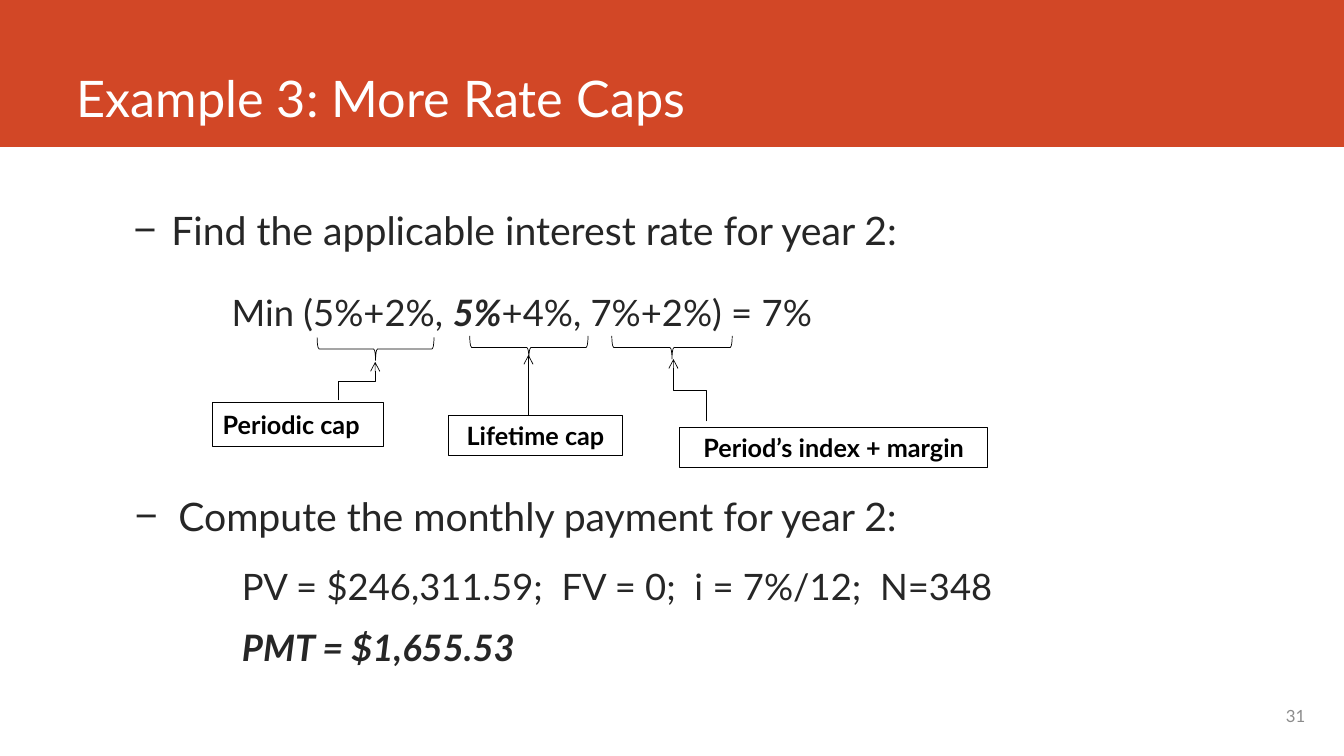
"""Build the rate caps example slide."""
from dataclasses import dataclass
from lxml.etree import SubElement
from pptx import Presentation
from pptx.dml.color import RGBColor
from pptx.enum.shapes import MSO_CONNECTOR, MSO_SHAPE
from pptx.enum.text import MSO_ANCHOR, MSO_AUTO_SIZE, PP_ALIGN
from pptx.oxml.ns import qn
from pptx.util import Pt


@dataclass(frozen=True)
class Theme:
    """Hold the font, colours and type sizes."""
    face: str = "Lato"
    band: RGBColor = RGBColor(0xD2, 0x47, 0x26)
    white: RGBColor = RGBColor(0xFF, 0xFF, 0xFF)
    ink: RGBColor = RGBColor(0x26, 0x26, 0x26)
    black: RGBColor = RGBColor(0, 0, 0)
    grey: RGBColor = RGBColor(0x8C, 0x8C, 0x8C)
    title: int = 36
    point: int = 28
    math: int = 26
    label: int = 18
    page: int = 12


THEME = Theme()


def style(para, size, color, bold=None, italic=None):
    """Set the font of a whole paragraph."""
    font = para.font
    font.name, font.size = THEME.face, Pt(size)
    font.bold, font.italic = bold, italic
    font.color.rgb = color


def place(shape, left, top, width, height):
    """Move a shape and give it a size."""
    shape.left, shape.top = Pt(left), Pt(top)
    shape.width, shape.height = Pt(width), Pt(height)


def add_form(slide, kind, left, top, width, height, line=None, fill=None):
    """Add a preset shape with a plain outline or fill."""
    form = slide.shapes.add_shape(kind, Pt(left), Pt(top), Pt(width), Pt(height))
    form.shadow.inherit = False
    if fill is None:
        form.fill.background()
    else:
        form.fill.solid()
        form.fill.fore_color.rgb = fill
    if line is None:
        form.line.fill.background()
    else:
        form.line.color.rgb, form.line.width = THEME.black, Pt(line)
    return form


def add_band(slide):
    """Put the colour band behind the title."""
    band = add_form(slide, MSO_SHAPE.RECTANGLE, 0, 0, 960, 105, fill=THEME.band)
    band.element.getparent().insert(2, band.element)


def set_title(slide, text):
    """Fill the title placeholder."""
    title = slide.shapes.title
    place(title, 47.5, 0, 846.7, 95)
    frame = title.text_frame
    frame.text = text
    frame.auto_size = MSO_AUTO_SIZE.NONE
    frame.vertical_anchor = MSO_ANCHOR.BOTTOM
    para = frame.paragraphs[0]
    para.alignment = PP_ALIGN.LEFT
    style(para, THEME.title, THEME.white)


def add_para(para, parts, size, left, hang, before, strong=None):
    """Fill one body paragraph, with a dash when it hangs."""
    para.space_before, para.space_after = Pt(before), Pt(6)
    props = para._p.get_or_add_pPr()
    props.set("marL", str(Pt(left)))
    props.set("indent", str(Pt(-hang)))
    if hang:
        SubElement(props, qn("a:buChar")).set("char", "−")
    else:
        SubElement(props, qn("a:buNone"))
    style(para, size, THEME.ink, strong, strong)
    for text, heavy in parts:
        run = para.add_run()
        run.text = text
        if heavy:
            run.font.bold = run.font.italic = True


def set_body(slide):
    """Fill the body placeholder with the two steps."""
    body = slide.placeholders[1]
    place(body, 66.2, 144, 828, 347)
    frame = body.text_frame
    frame.auto_size = MSO_AUTO_SIZE.NONE
    frame.vertical_anchor = MSO_ANCHOR.TOP
    rate = [("Min (5%+2%, ", False), ("5%", True), ("+4%, 7%+2%) = 7%", False)]
    given = "PV = $246,311.59;  FV = 0;  i = 7%/12;  N=348"
    rows = [
        ([("Find the applicable interest rate for year 2:", False)],
         THEME.point, 49, 27, 0),
        (rate, THEME.math, 92, 0, 20),
        ([("Compute the monthly payment for year 2:", False)],
         THEME.point, 54, 31, 107),
        ([(given, False)], THEME.math, 99.4, 0, 12),
        ([("PMT = $1,655.53", False)], THEME.math, 99.4, 0, 6, True),
    ]
    for index, row in enumerate(rows):
        para = frame.add_paragraph() if index else frame.paragraphs[0]
        add_para(para, *row)


def add_brace(slide, left, top, width):
    """Add a brace that lies under a term and points down."""
    depth = 16.5
    brace = add_form(slide, MSO_SHAPE.RIGHT_BRACE, left + (width - depth) / 2,
                     top - (width - depth) / 2, depth, width, line=0.5)
    brace.rotation = 90


def add_label(slide, text, left, top, width, height, align=PP_ALIGN.CENTER):
    """Add a framed label."""
    box = add_form(slide, MSO_SHAPE.RECTANGLE, left, top, width, height, line=0.75)
    frame = box.text_frame
    frame.text = text
    frame.vertical_anchor = MSO_ANCHOR.MIDDLE
    para = frame.paragraphs[0]
    para.alignment = align
    style(para, THEME.label, THEME.black, True)


def add_arrow(slide, start, end):
    """Add an arrow that climbs from start to end, with a bend if needed."""
    (x1, y1), (x2, y2) = start, end
    bent = x1 != x2
    kind = MSO_CONNECTOR.ELBOW if bent else MSO_CONNECTOR.STRAIGHT
    if bent:
        mid_x, mid_y = (x1 + x2) / 2, (y1 + y2) / 2
        half_w, half_h = (y1 - y2) / 2, (x2 - x1) / 2
        x1, y1 = mid_x - half_w, mid_y - half_h
        x2, y2 = mid_x + half_w, mid_y + half_h
    arrow = slide.shapes.add_connector(kind, Pt(x1), Pt(y1), Pt(x2), Pt(y2))
    arrow.line.color.rgb, arrow.line.width = THEME.black, Pt(0.5)
    props = arrow.element.spPr
    if bent:
        props.find(qn("a:xfrm")).set("rot", str(270 * 60000))
    SubElement(props.find(qn("a:ln")), qn("a:tailEnd")).set("type", "arrow")
    SubElement(props, qn("a:effectLst"))


def add_page(slide, text):
    """Add the page number."""
    box = slide.shapes.add_textbox(Pt(682), Pt(497), Pt(257.5), Pt(29))
    frame = box.text_frame
    frame.word_wrap = True
    frame.text = text
    frame.vertical_anchor = MSO_ANCHOR.MIDDLE
    para = frame.paragraphs[0]
    para.alignment = PP_ALIGN.RIGHT
    style(para, THEME.page, THEME.grey)


def main():
    """Build and save the slide."""
    deck = Presentation()
    deck.slide_width, deck.slide_height = Pt(960), Pt(540)
    slide = deck.slides.add_slide(deck.slide_layouts[1])
    add_band(slide)
    set_title(slide, "Example 3: More Rate Caps")
    set_body(slide)
    add_page(slide, "31")
    for left, top, width in [(226.5, 241, 83.5), (335.5, 240, 84.5), (437, 240, 86)]:
        add_brace(slide, left, top, width)
    add_label(slide, "Periodic cap", 152, 287.5, 122, 31.5, PP_ALIGN.LEFT)
    add_label(slide, "Period’s index + margin", 485.5, 305.5, 220, 28.5)
    add_label(slide, "Lifetime cap", 320.5, 297, 124, 28.5)
    add_arrow(slide, (242, 286), (268, 258.5))
    add_arrow(slide, (504.5, 301), (481, 256.5))
    add_arrow(slide, (377.5, 297), (377.5, 253.5))
    deck.save("out.pptx")


if __name__ == "__main__":
    main()
